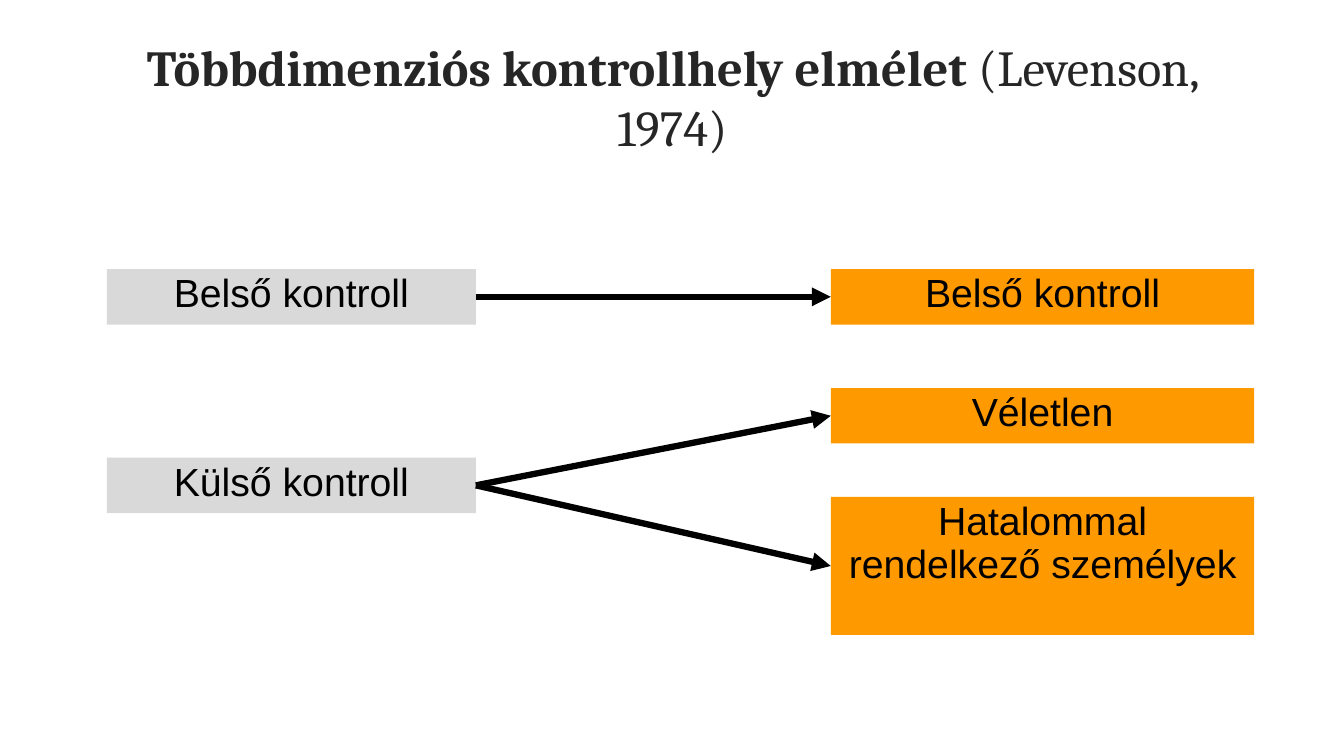
"""Builds the slide on the multidimensional locus of control theory."""
from lxml.etree import SubElement
from pptx import Presentation
from pptx.dml.color import RGBColor
from pptx.enum.shapes import MSO_CONNECTOR, MSO_SHAPE
from pptx.enum.text import MSO_ANCHOR, PP_ALIGN
from pptx.oxml.ns import qn
from pptx.util import Inches, Pt

BLACK = RGBColor(0x00, 0x00, 0x00)
TITLE_GREY = RGBColor(0x26, 0x26, 0x26)
BOX_GREY = RGBColor(0xD9, 0xD9, 0xD9)
ORANGE = RGBColor(0xFF, 0x99, 0x00)
RIGHT_SIDE, LEFT_SIDE = 3, 1


def add_run(paragraph, text, font_name, size, color, bold=False):
    run = paragraph.add_run()
    run.text = text
    run.font.name = font_name
    run.font.size = Pt(size)
    run.font.bold = bold
    run.font.color.rgb = color


def add_box(left, top, width, height, fill, text):
    box = slide.shapes.add_shape(
        MSO_SHAPE.RECTANGLE, Inches(left), Inches(top), Inches(width), Inches(height))
    box.shadow.inherit = False
    box.fill.solid()
    box.fill.fore_color.rgb = fill
    box.line.fill.background()
    box.text_frame.word_wrap = True
    box.text_frame.vertical_anchor = MSO_ANCHOR.TOP
    paragraph = box.text_frame.paragraphs[0]
    paragraph.alignment = PP_ALIGN.CENTER
    paragraph.line_spacing = 0.9
    add_run(paragraph, text, "Arial", 28, BLACK)
    return box


presentation = Presentation()
presentation.slide_width = Inches(13.33)
presentation.slide_height = Inches(7.5)
slide = presentation.slides.add_slide(presentation.slide_layouts[6])

title = slide.shapes.add_textbox(Inches(0.92), Inches(0.23), Inches(11.5), Inches(1.45))
title.text_frame.word_wrap = True
title.text_frame.vertical_anchor = MSO_ANCHOR.MIDDLE
title_paragraph = title.text_frame.paragraphs[0]
title_paragraph.alignment = PP_ALIGN.CENTER
add_run(title_paragraph, "Többdimenziós kontrollhely elmélet ", "Cambria", 36, TITLE_GREY, True)
add_run(title_paragraph, "(Levenson, 1974)", "Cambria", 36, TITLE_GREY)

internal, external = [
    add_box(1.06, top, 3.66, 0.55, BOX_GREY, text)
    for top, text in [(2.67, "Belső kontroll"), (4.54, "Külső kontroll")]
]
internal_factor, chance, powerful_others = [
    add_box(8.24, top, 4.2, height, ORANGE, text)
    for top, height, text in [
        (2.67, 0.55, "Belső kontroll"),
        (3.85, 0.55, "Véletlen"),
        (4.93, 1.37, "Hatalommal rendelkező személyek"),
    ]
]

for source, target in [
    (internal, internal_factor), (external, chance), (external, powerful_others)
]:
    arrow = slide.shapes.add_connector(MSO_CONNECTOR.STRAIGHT, 0, 0, 0, 0)
    arrow.begin_connect(source, RIGHT_SIDE)
    arrow.end_connect(target, LEFT_SIDE)
    arrow.line.color.rgb = BLACK
    arrow.line.width = Pt(4.5)
    SubElement(arrow.line._get_or_add_ln(), qn("a:tailEnd"), type="triangle")
    SubElement(arrow._element.spPr, qn("a:effectLst"))

presentation.save("out.pptx")
